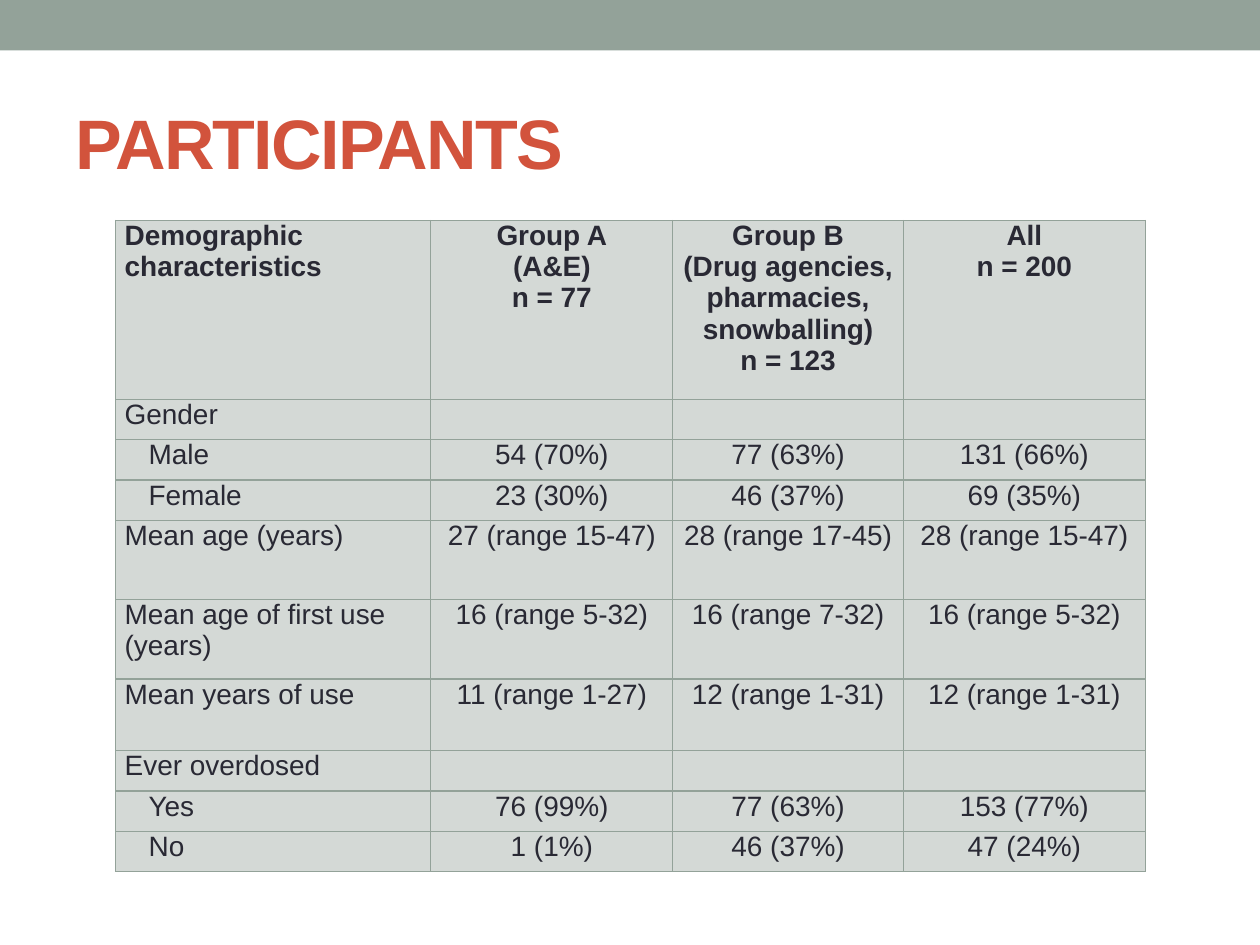
"""Builds the Participants slide with its table of demographic characteristics."""
from lxml.etree import SubElement
from pptx import Presentation
from pptx.dml.color import RGBColor as RGB
from pptx.enum.shapes import MSO_SHAPE as SHAPE
from pptx.enum.text import MSO_ANCHOR as ANCHOR, PP_ALIGN as ALIGN
from pptx.oxml.ns import qn
from pptx.util import Inches, Pt

COLORS = {"sage": "93A299", "cell": "D4D9D6", "title": "D2533C", "ink": "292934"}
COLS = [2.5, 1.92, 1.83, 1.92]
HEIGHTS = [1.42] + [0.32] * 3 + [0.63, 0.63, 0.57] + [0.32] * 3
INDENTED = {"Male", "Female", "Yes", "No"}
ROWS = [
    ["Demographic characteristics", "Group A\n(A&E)\nn = 77",
     "Group B\n(Drug agencies, pharmacies, snowballing)\nn = 123", "All\nn = 200"],
    ["Gender", "", "", ""],
    ["Male", "54 (70%)", "77 (63%)", "131 (66%)"],
    ["Female", "23 (30%)", "46 (37%)", "69 (35%)"],
    ["Mean age (years)", "27 (range 15-47)", "28 (range 17-45)", "28 (range 15-47)"],
    ["Mean age of first use (years)", "16 (range 5-32)", "16 (range 7-32)", "16 (range 5-32)"],
    ["Mean years of use", "11 (range 1-27)", "12 (range 1-31)", "12 (range 1-31)"],
    ["Ever overdosed", "", "", ""],
    ["Yes", "76 (99%)", "77 (63%)", "153 (77%)"],
    ["No", "1 (1%)", "46 (37%)", "47 (24%)"],
]


class Deck:
    """Holds the style and the current slide."""

    def __init__(self, prs):
        self.font = "Arial"
        self.slide = prs.slides.add_slide(prs.slide_layouts[5])

    def style(self, font, color, **formats):
        """Applies the deck font, a colour and other format values."""
        for name, value in {"name": self.font, **formats}.items():
            setattr(font, name, value)
        font.color.rgb = RGB.from_string(COLORS[color])

    def bar(self, x, y, w, h):
        """Adds a plain filled band."""
        sp = self.slide.shapes.add_shape(SHAPE.RECTANGLE, *map(Inches, (x, y, w, h)))
        sp.shadow.inherit = False
        sp.fill.solid()
        sp.fill.fore_color.rgb = RGB.from_string(COLORS["sage"])
        sp.line.fill.background()

    def title(self, text, x, y, w, h):
        """Fills and places the title placeholder."""
        sp = self.slide.shapes.title
        sp.left, sp.top, sp.width, sp.height = map(Inches, (x, y, w, h))
        tf = sp.text_frame
        tf.vertical_anchor = ANCHOR.MIDDLE
        p = tf.paragraphs[0]
        p.alignment = ALIGN.LEFT
        r = p.add_run()
        r.text = text
        self.style(r.font, "title", size=Pt(40), bold=True)
        r.font._element.set("spc", "-100")

    def borders(self, cell):
        """Draws a thin line on every side of a cell."""
        tc_pr = cell._tc.get_or_add_tcPr()
        for side in ("lnL", "lnR", "lnT", "lnB"):
            ln = SubElement(tc_pr, qn(f"a:{side}"), w=str(Pt(0.75)))
            fill = SubElement(ln, qn("a:solidFill"))
            SubElement(fill, qn("a:srgbClr"), val=COLORS["sage"])

    def cell(self, cell, text, header, label):
        """Fills, borders and writes one table cell."""
        self.borders(cell)
        cell.fill.solid()
        cell.fill.fore_color.rgb = RGB.from_string(COLORS["cell"])
        margins = {"margin_left": 0.07, "margin_right": 0.07, "margin_top": 0, "margin_bottom": 0}
        for name, value in margins.items():
            setattr(cell, name, Inches(value))
        cell.text = text
        for p in cell.text_frame.paragraphs:
            p.alignment = ALIGN.LEFT if label else ALIGN.CENTER
            if text in INDENTED:
                p._p.get_or_add_pPr().set("marL", str(Inches(0.19)))
            for r in p.runs:
                self.style(r.font, "ink", size=Pt(16), bold=header)

    def table(self, rows, x, y):
        """Adds the table, sized by its columns and rows."""
        size = (x, y, sum(COLS), sum(HEIGHTS))
        table = self.slide.shapes.add_table(len(rows), len(COLS), *map(Inches, size)).table
        table.first_row = table.horz_banding = False
        for col, width in zip(table.columns, COLS):
            col.width = Inches(width)
        for i, (row, height) in enumerate(zip(table.rows, HEIGHTS)):
            row.height = Inches(height)
            for j, text in enumerate(rows[i]):
                self.cell(table.cell(i, j), text, header=i == 0, label=j == 0)


def main():
    prs = Presentation()
    prs.slide_width, prs.slide_height = Inches(10), Inches(7.5)
    deck = Deck(prs)
    deck.bar(0, 0, 10, 0.4)
    deck.title("PARTICIPANTS", 0.5, 0.58, 9, 1.08)
    deck.table(ROWS, 0.92, 1.75)
    prs.save("out.pptx")


if __name__ == "__main__":
    main()
